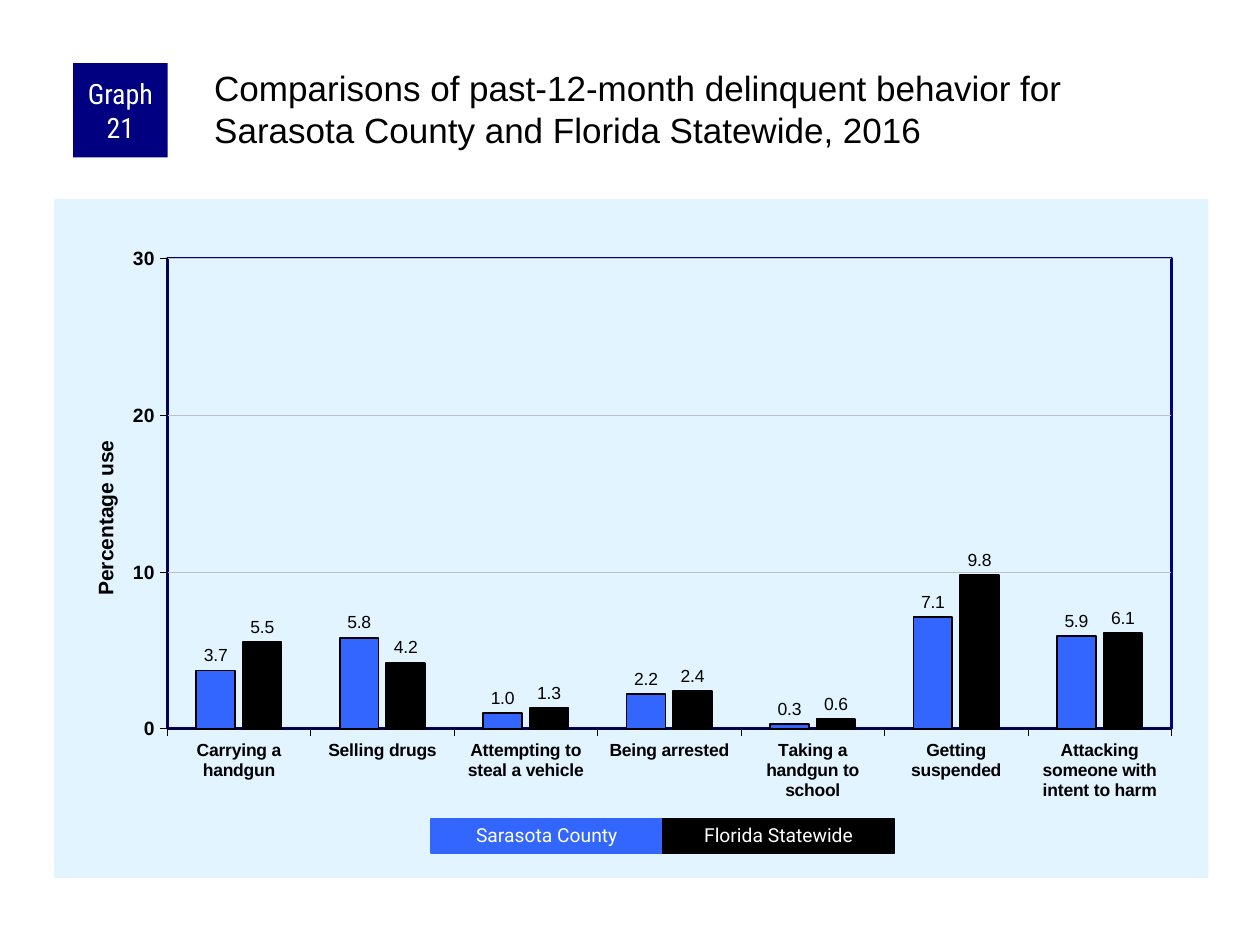
"""Build the delinquent behavior comparison slide with its column chart."""
from lxml.etree import SubElement
from pptx import Presentation
from pptx.chart.data import CategoryChartData
from pptx.dml.color import RGBColor
from pptx.enum.chart import XL_CHART_TYPE, XL_LABEL_POSITION, XL_TICK_MARK
from pptx.enum.shapes import MSO_SHAPE
from pptx.enum.text import MSO_ANCHOR, PP_ALIGN
from pptx.oxml import parse_xml
from pptx.oxml.ns import nsdecls, qn
from pptx.util import Inches, Pt

COLORS = {
    "navy": "000080",
    "county": "3366FF",
    "state": "000000",
    "panel": "E1F4FF",
    "grid": "C0C0C0",
    "black": "000000",
    "white": "FFFFFF",
}


def style_font(font, name, size, color, bold=False):
    for key, value in {"name": name, "size": Pt(size), "bold": bold}.items():
        setattr(font, key, value)
    font.color.rgb = RGBColor.from_string(COLORS[color])


def place_in_chart(parent, index, values):
    for old in parent.findall(qn("c:layout")):
        parent.remove(old)
    layout = parse_xml(f"<c:layout {nsdecls('c')}><c:manualLayout/></c:layout>")
    for tag, value in values.items():
        SubElement(layout[0], qn(f"c:{tag}")).set("val", str(value))
    parent.insert(index, layout)


deck = Presentation()
deck.slide_width, deck.slide_height = Inches(10), Inches(7.5)
slide = deck.slides.add_slide(deck.slide_layouts[6])

chart_data = CategoryChartData(number_format="0.0")
chart_data.categories = [
    "Carrying a handgun",
    "Selling drugs",
    "Attempting to steal a vehicle",
    "Being arrested",
    "Taking a handgun to school",
    "Getting suspended",
    "Attacking someone with intent to harm",
]
chart_data.add_series("Sarasota County", (3.7, 5.8, 1.0, 2.2, 0.3, 7.1, 5.9))
chart_data.add_series("Florida Statewide", (5.5, 4.2, 1.3, 2.4, 0.6, 9.8, 6.1))
chart = slide.shapes.add_chart(
    XL_CHART_TYPE.COLUMN_CLUSTERED,
    Inches(0.43), Inches(1.58), Inches(9.16), Inches(5.39), chart_data,
).chart
chart.has_legend = False
chart.has_title = False
style_font(chart.font, "Arial", 11.5, "black")

plot = chart.plots[0]
for key, value in {"gap_width": 150, "overlap": -20, "vary_by_categories": False}.items():
    setattr(plot, key, value)
for series, color in zip(plot.series, ("county", "state")):
    series.format.fill.solid()
    series.format.fill.fore_color.rgb = RGBColor.from_string(COLORS[color])
    series.format.line.color.rgb = RGBColor.from_string(COLORS["black"])
    series.format.line.width = Pt(1)
    series.invert_if_negative = False
    labels = series.data_labels
    label_format = {
        "show_value": True,
        "number_format": "0.0",
        "number_format_is_linked": False,
        "position": XL_LABEL_POSITION.OUTSIDE_END,
    }
    for key, value in label_format.items():
        setattr(labels, key, value)
    style_font(labels.font, "Arial", 10, "black")

value_axis = chart.value_axis
for axis, size in ((chart.category_axis, 10), (value_axis, 11)):
    axis.major_tick_mark = XL_TICK_MARK.OUTSIDE
    axis.minor_tick_mark = XL_TICK_MARK.NONE
    axis.format.line.color.rgb = RGBColor.from_string(COLORS["black"])
    axis.format.line.width = Pt(0.25)
    style_font(axis.tick_labels.font, "Arial", size, "black", True)
value_format = {
    "minimum_scale": 0,
    "maximum_scale": 30,
    "major_unit": 10,
    "has_major_gridlines": True,
}
for key, value in value_format.items():
    setattr(value_axis, key, value)
value_axis.tick_labels.number_format = "0"
value_axis.tick_labels.number_format_is_linked = False
grid_line = value_axis.major_gridlines.format.line
grid_line.color.rgb = RGBColor.from_string(COLORS["grid"])
grid_line.width = Pt(0.25)

title_frame = value_axis.axis_title.text_frame
title_frame.text = "Percentage use"
style_font(title_frame.paragraphs[0].runs[0].font, "Arial", 12, "black", True)
place_in_chart(
    value_axis.axis_title.element, 1,
    {"xMode": "edge", "yMode": "edge", "x": 0.03, "y": 0.35},
)

chart_element = chart.element.find(qn("c:chart"))
plot_area = chart_element.find(qn("c:plotArea"))
place_in_chart(plot_area, 0, {
    "layoutTarget": "inner", "xMode": "edge", "yMode": "edge",
    "x": 0.098, "y": 0.087, "w": 0.87, "h": 0.693,
})
plot_area.append(parse_xml(
    f'<c:spPr {nsdecls("c", "a")}><a:noFill/><a:ln w="{Pt(1.5)}"><a:solidFill>'
    f'<a:srgbClr val="{COLORS["navy"]}"/></a:solidFill></a:ln></c:spPr>'
))
chart_element.addnext(parse_xml(
    f'<c:spPr {nsdecls("c", "a")}><a:solidFill><a:srgbClr val="{COLORS["panel"]}"/>'
    "</a:solidFill><a:ln><a:noFill/></a:ln></c:spPr>"
))

boxes = [
    ("Graph 21", 0.58, 0.5, 0.75, 0.75, "navy", "Roboto Condensed", 16, 0.05, 0, 1),
    ("Sarasota County", 3.42, 6.5, 1.84, 0.27, "county", "Roboto", 11, 0.1, 0.05, 0.9),
    ("Florida Statewide", 5.26, 6.5, 1.84, 0.27, "state", "Roboto", 11, 0.1, 0.05, 0.9),
]
for text, left, top, width, height, color, font, size, side, edge, spacing in boxes:
    box = slide.shapes.add_shape(
        MSO_SHAPE.RECTANGLE, Inches(left), Inches(top), Inches(width), Inches(height)
    )
    box.shadow.inherit = False
    box.fill.solid()
    box.fill.fore_color.rgb = RGBColor.from_string(COLORS[color])
    if color == "navy":
        box.line.fill.background()
    else:
        box.line.color.rgb = RGBColor.from_string(COLORS[color])
        box.line.width = Pt(0.75)
    frame_format = {
        "margin_left": Inches(side),
        "margin_right": Inches(side),
        "margin_top": Inches(edge),
        "margin_bottom": Inches(edge),
        "vertical_anchor": MSO_ANCHOR.MIDDLE,
        "word_wrap": True,
    }
    for key, value in frame_format.items():
        setattr(box.text_frame, key, value)
    para = box.text_frame.paragraphs[0]
    para.alignment = PP_ALIGN.CENTER
    para.line_spacing = spacing
    span = para.add_run()
    span.text = text
    style_font(span.font, font, size, "white")

heading = slide.shapes.add_textbox(Inches(1.67), Inches(0.5), Inches(7.92), Inches(0.83))
heading_format = {
    "word_wrap": True,
    "margin_left": Inches(0.03),
    "margin_top": Inches(0.03),
    "margin_right": 0,
    "margin_bottom": 0,
}
for key, value in heading_format.items():
    setattr(heading.text_frame, key, value)
span = heading.text_frame.paragraphs[0].add_run()
span.text = (
    "Comparisons of past-12-month delinquent behavior for "
    "Sarasota County and Florida Statewide, 2016"
)
style_font(span.font, "Arial", 20, "black")

deck.save("out.pptx")
